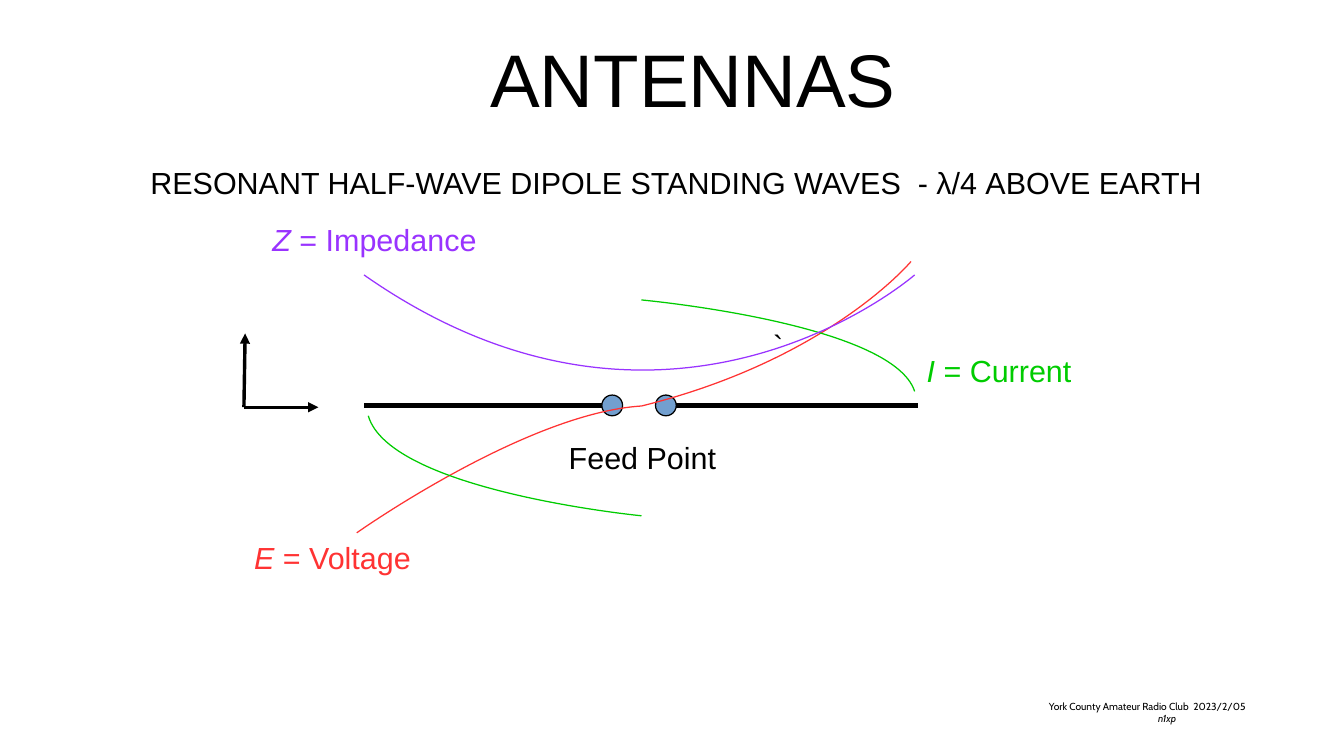
from lxml.etree import SubElement
from pptx import Presentation
from pptx.dml.color import RGBColor
from pptx.enum.shapes import MSO_CONNECTOR as Connector, MSO_SHAPE as Preset
from pptx.enum.text import MSO_ANCHOR as Anchor, PP_ALIGN as Align
from pptx.oxml.ns import qn
from pptx.util import Inches, Pt

CELL = Inches(0.1)  # one column or row of the grid
COLUMNS, ROWS = 110.2, 62
COLORS = {"ink": "000000", "voltage": "FF3333", "current": "00CC00",
          "impedance": "9933FF", "terminal": "729FCF"}


def grid(*cells):
    return [round(cell * CELL) for cell in cells]


def write(para, text, size=18, font="Arial", color="ink", italic=False):
    span = para.add_run()
    span.text = text
    span.font.size, span.font.name, span.font.italic = Pt(size), font, italic
    span.font.color.rgb = RGBColor.from_string(COLORS[color])


class Diagram:
    thick = 2.89

    def __init__(self, page):
        self.shapes = page.shapes

    def stroke(self, line, color, width=None):
        """Without a width the line stays a hairline."""
        line.color.rgb = RGBColor.from_string(COLORS[color])
        if width:
            line.width = Pt(width)

    def label(self, place, *spans, align=Align.LEFT, **style):
        """Each span is a pair: its text and whether it is italic."""
        frame = self.shapes.add_textbox(*grid(*place)).text_frame
        frame.word_wrap = True
        para = frame.paragraphs[0]
        para.alignment = align
        for text, italic in spans:
            write(para, text, italic=italic, **style)
        return frame

    def line(self, start, end, width=None, arrow=False):
        link = self.shapes.add_connector(Connector.STRAIGHT, *grid(*start, *end))
        self.stroke(link.line, "ink", width)
        properties = link.element.spPr
        if arrow:
            SubElement(properties.find(qn("a:ln")), qn("a:tailEnd"), type="triangle")
        SubElement(properties, qn("a:effectLst"))

    def terminal(self, column, row, size=1.7):
        dot = self.shapes.add_shape(
            Preset.OVAL, *grid(column - size / 2, row - size / 2, size, size))
        dot.shadow.inherit = False
        dot.fill.solid()
        dot.fill.fore_color.rgb = RGBColor.from_string(COLORS["terminal"])
        self.stroke(dot.line, "ink")

    def curve(self, start, pull, end, color):
        """Cubic curve whose second control point lies on its end."""
        builder = self.shapes.build_freeform(*grid(*start))
        builder.add_line_segments([grid(*pull), grid(*end), grid(*end)], close=False)
        wave = builder.convert_to_shape()
        outline = next(wave.element.iter(qn("a:path")))
        segments = outline.findall(qn("a:lnTo"))
        bend = SubElement(outline, qn("a:cubicBezTo"))
        for segment in segments:
            bend.append(segment[0])
            outline.remove(segment)
        wave.shadow.inherit = False
        wave.fill.background()
        self.stroke(wave.line, color)
        return wave


def main():
    deck = Presentation()
    deck.slide_width, deck.slide_height = grid(COLUMNS, ROWS)
    diagram = Diagram(deck.slides.add_slide(deck.slide_layouts[6]))

    # Footer
    footer = diagram.label((85.6, 57.1, 20.2, 2.7),
                           ("York County Amateur Radio Club  2023/2/05", False),
                           size=6, font="Cabin")
    footer.vertical_anchor = Anchor.MIDDLE
    footer.margin_left = footer.margin_right = Inches(0.04)
    footer.margin_top = footer.margin_bottom = Inches(0.04)
    author = footer.add_paragraph()
    author.alignment = Align.CENTER
    write(author, "n1xp", size=6, font="Cabin", italic=True)

    # Headings
    diagram.label((15.35, 2.2, 83, 7.8), ("ANTENNAS", False), size=44, align=Align.CENTER)
    diagram.label((11.35, 12.95, 93, 6.6),
                  ("RESONANT HALF-WAVE DIPOLE STANDING WAVES  - λ/4 ABOVE EARTH", False))

    # Dipole arms, axes and feed point
    axis = 33.25
    for left, right in ((29.85, 50.7), (55.1, 75.25)):
        diagram.line((left, axis), (right, axis), width=diagram.thick)
    for tip in ((26.1, 33.4), (20.1, 27.35)):
        diagram.line((20, 33.4), tip, arrow=True)
    for column in (50.2, 54.6):
        diagram.terminal(column, axis)
    diagram.label((45.65, 35.5, 14.8, 4), ("Feed Point", False))

    # Standing waves
    middle = 52.6
    diagram.curve((middle, 33.3), (68, 29.5), (74.7, 21.45), "voltage")
    diagram.curve((middle, 33.3), (43.1, 33.9), (29.25, 43.7), "voltage")
    upper = diagram.curve((75, 32.1), (73.2, 26.5), (middle, 24.6), "current")
    diagram.curve((30.2, 34.1), (32, 40.3), (middle, 42.3), "current")
    diagram.curve((29.85, 22.55), (54.9, 40.1), (75, 22.55), "impedance")

    # Mark on the upper current wave
    upper.text_frame.vertical_anchor = Anchor.MIDDLE
    mark = upper.text_frame.paragraphs[0]
    mark.alignment = Align.CENTER
    write(mark, "`")

    # Wave labels
    for symbol, meaning, color, place in (
            ("E", "Voltage", "voltage", (19.85, 43.7, 16.4, 3.8)),
            ("I", "Current", "current", (75, 28.4, 16.4, 3.8)),
            ("Z", "Impedance", "impedance", (21.35, 17.65, 19.7, 3.9))):
        diagram.label(place, (symbol, True), (f" = {meaning}", False), color=color)

    deck.save("out.pptx")


if __name__ == "__main__":
    main()
